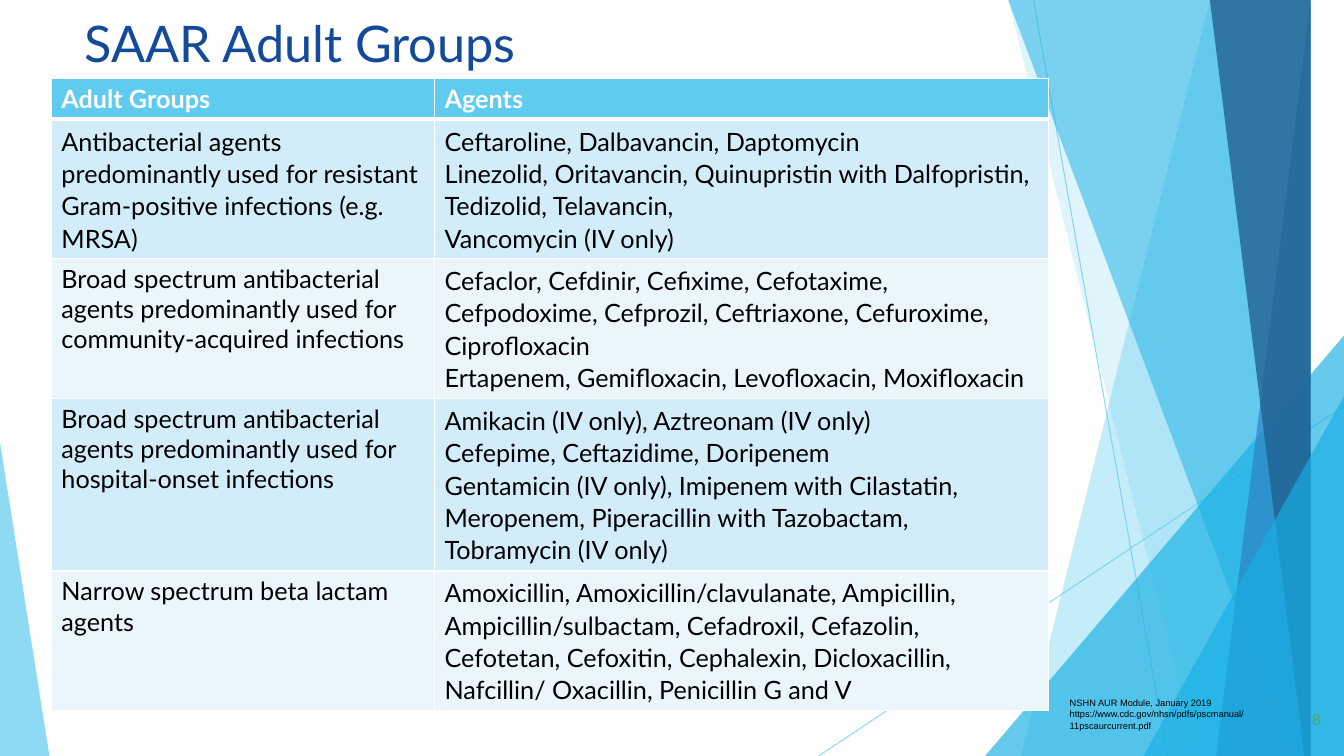
from pptx import Presentation
from pptx.dml.color import RGBColor
from pptx.enum.shapes import MSO_CONNECTOR, MSO_SHAPE
from pptx.enum.text import MSO_ANCHOR, MSO_AUTO_SIZE, PP_ALIGN
from pptx.oxml.ns import qn
from pptx.util import Inches, Pt
from lxml.etree import SubElement, Element

SKY = RGBColor(0x5F, 0xCB, 0xEF)
CYAN = RGBColor(0x17, 0xB0, 0xE4)
BLUE = RGBColor(0x2E, 0x83, 0xC3)
NAVY = RGBColor(0x22, 0x62, 0x92)
TITLE_BLUE = RGBColor(0x13, 0x4A, 0x99)
GREEN = RGBColor(0x42, 0xB0, 0x51)
BAND_DARK = RGBColor(0xD2, 0xEC, 0xF9)
BAND_LIGHT = RGBColor(0xEA, 0xF6, 0xFC)
BLACK = RGBColor(0, 0, 0)
WHITE = RGBColor(0xFF, 0xFF, 0xFF)

WIDTH, HEIGHT = 13.33, 7.5
TITLE = "SAAR Adult Groups"
SOURCE = ["NSHN AUR Module, January 2019",
          "https://www.cdc.gov/nhsn/pdfs/pscmanual/11pscaurcurrent.pdf"]
PAGE_NUMBER = "8"
HEADER = ("Adult Groups", "Agents")
GROUPS = [
    ("Antibacterial agents predominantly used for resistant Gram-positive infections (e.g. MRSA)",
     ["Ceftaroline, Dalbavancin, Daptomycin",
      "Linezolid, Oritavancin, Quinupristin with Dalfopristin, Tedizolid, Telavancin,",
      "Vancomycin (IV only)"]),
    ("Broad spectrum antibacterial agents predominantly used for community-acquired infections",
     ["Cefaclor, Cefdinir, Cefixime, Cefotaxime, Cefpodoxime, Cefprozil, Ceftriaxone, "
      "Cefuroxime, Ciprofloxacin",
      "Ertapenem, Gemifloxacin, Levofloxacin, Moxifloxacin"]),
    ("Broad spectrum antibacterial agents predominantly used for hospital-onset infections",
     ["Amikacin (IV only), Aztreonam (IV only)",
      "Cefepime, Ceftazidime, Doripenem",
      "Gentamicin (IV only), Imipenem with Cilastatin, Meropenem, "
      "Piperacillin with Tazobactam, Tobramycin (IV only)"]),
    ("Narrow spectrum beta lactam agents",
     ["Amoxicillin, Amoxicillin/clavulanate, Ampicillin, Ampicillin/sulbactam, Cefadroxil, "
      "Cefazolin, Cefotetan, Cefoxitin, Cephalexin, Dicloxacillin, Nafcillin/ Oxacillin, "
      "Penicillin G and V"]),
]
COLUMN_WIDTHS = (3.8, 6.09)
ROW_HEIGHTS = (0.4, 1.38, 1.39, 1.71, 1.38)

RAYS = [((10.25, 0), (11.58, HEIGHT)), ((WIDTH, 4.03), (8.12, HEIGHT))]
# Each facet: kind, geometry, colour, opacity.
FACETS = [
    ("band", (12.28, 10.04), SKY, 36),
    ("band", (10.5, 11.83), SKY, 20),
    ("triangle", (9.77, 3.33, 3.56, 4.17, 1), CYAN, 66),
    ("band", (10.21, 12.91), CYAN, 50),
    ("band", (13.03, 11.92), BLUE, 70),
    ("band", (11.96, 13.18), NAVY, 80),
    ("triangle", (11.34, 3.93, 1.99, 3.57, 1), CYAN, 66),
    ("triangle", (0, 4.39, 0.49, 3.11, 0), SKY, 70),
]


def set_opacity(shape, percent):
    """Make every plain colour of a shape partly transparent."""
    for color in shape._element.spPr.iter(qn("a:srgbClr")):
        SubElement(color, qn("a:alpha"), val=str(percent * 1000))


def add_ray(page, start, end):
    """Draw one thin background line."""
    points = [Inches(value) for value in (*start, *end)]
    ray = page.shapes.add_connector(MSO_CONNECTOR.STRAIGHT, *points)
    ray.line.color.rgb, ray.line.width = SKY, Pt(0.75)
    set_opacity(ray, 70)
    SubElement(ray._element.spPr, qn("a:effectLst"))


def add_facet(page, kind, geometry, color, opacity):
    """Draw one translucent background facet."""
    if kind == "band":
        top, bottom = geometry
        builder = page.shapes.build_freeform(top, 0, scale=Inches(1))
        builder.add_line_segments([(WIDTH, 0), (WIDTH, HEIGHT), (bottom, HEIGHT)])
        facet = builder.convert_to_shape()
    else:
        *frame, apex = geometry
        facet = page.shapes.add_shape(MSO_SHAPE.ISOSCELES_TRIANGLE, *map(Inches, frame))
        facet.adjustments[0] = apex
    facet.shadow.inherit = False
    facet.fill.solid()
    facet.fill.fore_color.rgb = color
    facet.line.fill.background()
    set_opacity(facet, opacity)


def write(frame, lines, color, spacing=1.0, align=PP_ALIGN.LEFT, **font):
    """Fill a text frame with formatted paragraphs."""
    frame.word_wrap = True
    for index, line in enumerate(lines):
        para = frame.add_paragraph() if index else frame.paragraphs[0]
        layout = {"alignment": align, "line_spacing": spacing,
                  "space_before": Pt(0), "space_after": Pt(0)}
        for name, value in layout.items():
            setattr(para, name, value)
        span = para.add_run()
        span.text = line
        span.font.color.rgb = color
        for name, value in font.items():
            setattr(span.font, name, value)


def place(page, shape, left, top, width, height):
    """Move a placeholder and bring it to the front."""
    frame = {"left": left, "top": top, "width": width, "height": height}
    for name, value in frame.items():
        setattr(shape, name, Inches(value))
    page.shapes._spTree.append(shape._element)
    shape.text_frame.auto_size = MSO_AUTO_SIZE.NONE
    shape.text_frame.vertical_anchor = MSO_ANCHOR.TOP


def add_title(page):
    """Set the title with its soft shadow."""
    title = page.shapes.title
    place(page, title, 0.74, 0.07, 9.4, 1.44)
    write(title.text_frame, [TITLE], TITLE_BLUE, name="Lato", size=Pt(36))
    fill = title._element.find(".//" + qn("a:rPr")).find(qn("a:solidFill"))
    effects = Element(qn("a:effectLst"))
    fill.addnext(effects)
    shadow = SubElement(effects, qn("a:outerShdw"), blurRad="50800", dist="76200",
                        dir="1800000", algn="tl", rotWithShape="0")
    color = SubElement(shadow, qn("a:srgbClr"), val="000000")
    SubElement(color, qn("a:alpha"), val="40000")


def add_source(page):
    """Set the source note without bullets."""
    source = page.placeholders[1]
    place(page, source, 10.51, 6.87, 2.56, 0.41)
    write(source.text_frame, SOURCE, BLACK, name="Arial", size=Pt(6.6))
    for para in source.text_frame.paragraphs:
        properties = para._p.get_or_add_pPr()
        properties.set("marL", "0")
        properties.set("indent", "0")
        SubElement(properties, qn("a:buNone"))


def add_page_number(page):
    """Write the page number at the lower right."""
    box = page.shapes.add_textbox(*map(Inches, (12.8, 6.99, 0.4, 0.29)))
    box.text_frame.vertical_anchor = MSO_ANCHOR.MIDDLE
    write(box.text_frame, [PAGE_NUMBER], GREEN, align=PP_ALIGN.RIGHT, name="Lato", size=Pt(11))


def style_cell(cell, color, bottom=1):
    """Give a cell its fill and white borders."""
    cell.fill.solid()
    cell.fill.fore_color.rgb = color
    properties = cell._tc.get_or_add_tcPr()
    for index, (side, width) in enumerate(zip("LRTB", (1, 1, 1, bottom))):
        border = Element(qn(f"a:ln{side}"), w=str(Pt(width)))
        SubElement(SubElement(border, qn("a:solidFill")), qn("a:srgbClr"), val=str(WHITE))
        properties.insert(index, border)


def add_group_table(page):
    """Build the table of adult groups and agents."""
    frame = (0.51, 0.78, sum(COLUMN_WIDTHS), sum(ROW_HEIGHTS))
    table = page.shapes.add_table(len(GROUPS) + 1, 2, *map(Inches, frame)).table
    for column, width in zip(table.columns, COLUMN_WIDTHS):
        column.width = Inches(width)
    for row, height in zip(table.rows, ROW_HEIGHTS):
        row.height = Inches(height)
    font = {"name": "Lato", "size": Pt(18)}
    for column, heading in enumerate(HEADER):
        cell = table.cell(0, column)
        style_cell(cell, SKY, bottom=3)
        write(cell.text_frame, [heading], WHITE, bold=True, **font)
    for row, (group, agents) in enumerate(GROUPS, 1):
        for column, lines in enumerate(([group], agents)):
            cell = table.cell(row, column)
            style_cell(cell, BAND_DARK if row % 2 else BAND_LIGHT)
            spacing = 1.07 if column or row == 1 else 1.0
            write(cell.text_frame, lines, BLACK, spacing, bold=False, **font)


def main():
    """Build the slide and save the deck."""
    deck = Presentation()
    deck.slide_width, deck.slide_height = Inches(WIDTH), Inches(HEIGHT)
    page = deck.slides.add_slide(deck.slide_layouts[1])
    for ray in RAYS:
        add_ray(page, *ray)
    for facet in FACETS:
        add_facet(page, *facet)
    add_page_number(page)
    add_source(page)
    add_title(page)
    add_group_table(page)
    deck.save("out.pptx")


if __name__ == "__main__":
    main()
